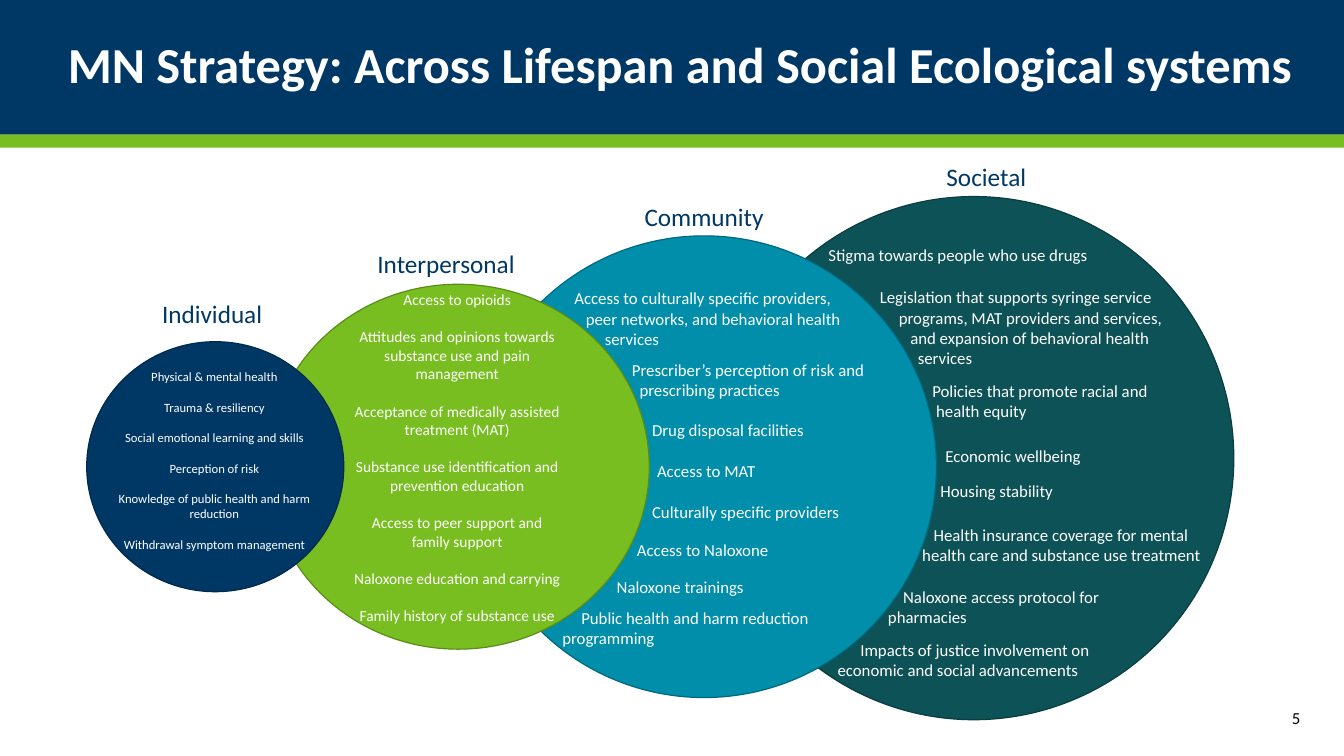
from dataclasses import dataclass

from pptx import Presentation
from pptx import util as u
from pptx.dml.color import RGBColor
from pptx.enum import shapes, text

# Boxes are (left, top, width, height) in percent of the slide's size
Box = tuple[float, float, float, float]

FONT = "Calibri"
NAVY, GREEN, WHITE = "003865", "78BE21", "FFFFFF"
LEFT, CENTER, RIGHT = text.PP_ALIGN.LEFT, text.PP_ALIGN.CENTER, text.PP_ALIGN.RIGHT
LINE_HEIGHT = 1.22  # line pitch of the font, in ems
INDENT = 2.71  # points per indent step


@dataclass
class Level:
    name: str
    label: tuple[float, float]
    circle: Box
    fill: str
    line: str


@dataclass
class FactorList:
    box: Box
    size: float
    factors: list[str]


@dataclass
class Note:
    left: float
    top: float
    lines: list[str]
    indents: tuple[int, ...] = (0, 0, 0, 0)
    width: float = 25.0


LEVELS = [
    Level("Societal", (67.35, 20.67), (53.1, 26, 38.7, 69.2), "0D5257", "0A3D40"),
    Level("Community", (46.35, 26), (35.1, 31.2, 34.58, 61.07), "008EAA", "00697E"),
    Level("Interpersonal", (27.15, 32.13), (19.88, 37.6, 28.43, 48.27), GREEN, "598D18"),
    Level("Individual", (9.75, 38.8), (6.45, 45.2, 19.13, 33.07), NAVY, "00294B"),
]

FACTOR_LISTS = [
    FactorList((25.43, 37.73, 17.18, 48.27), 11, [
        "Access to opioids",
        "Attitudes and opinions towards substance use and pain management",
        "Acceptance of medically assisted treatment (MAT)",
        "Substance use identification and prevention education",
        "Access to peer support and family support",
        "Naloxone education and carrying",
        "Family history of substance use",
    ]),
    FactorList((7.13, 48.13, 17.63, 26.4), 9, [
        "Physical & mental health",
        "Trauma & resiliency",
        "Social emotional learning and skills",
        "Perception of risk",
        "Knowledge of public health and harm reduction",
        "Withdrawal symptom management",
    ]),
]

SOCIETAL_NOTES = [
    Note(60.9, 31.73, ["Stigma towards people who use drugs"]),
    Note(64.73, 37.33, ["Legislation that supports syringe service",
                        "programs, MAT providers and services,",
                        "and expansion of behavioral health",
                        "services"], (0, 5, 8, 10)),
    Note(68.63, 49.73, ["Policies that promote racial and", "health equity"], (0, 1)),
    Note(69.6, 58.27, ["Economic wellbeing"]),
    Note(69.23, 62.93, ["Housing stability"]),
    Note(67.88, 68.8, ["Health insurance coverage for mental",
                       "health care and substance use treatment"], (3, 0)),
    Note(65.33, 76.93, ["Naloxone access protocol for", "pharmacies"], (4, 0)),
    Note(61.58, 84, ["Impacts of justice involvement on",
                     "economic and social advancements"], (6, 0)),
]

COMMUNITY_NOTES = [
    Note(42, 37.47, ["Access to culturally specific providers,",
                     "peer networks, and behavioral health",
                     "services"], (0, 3, 8)),
    Note(46.28, 46.93, ["Prescriber’s perception of risk and",
                        "prescribing practices"], (0, 2)),
    Note(47.78, 54.93, ["Drug disposal facilities"]),
    Note(48.15, 60.27, ["Access to MAT"]),
    Note(47.78, 65.73, ["Culturally specific providers"]),
    Note(46.65, 70.8, ["Access to Naloxone"]),
    Note(45.15, 75.6, ["Naloxone trainings"]),
    Note(41.1, 79.73, ["Public health and harm reduction", "programming"], (5, 0), 27.9),
]

prs = Presentation()
prs.slide_width, prs.slide_height = u.Inches(13.33), u.Inches(7.5)
s = prs.slides.add_slide(prs.slide_layouts[6])


def rgb(color: str) -> RGBColor:
    return RGBColor.from_string(color)


def place(box: Box) -> list[int]:
    sides = (prs.slide_width, prs.slide_height) * 2
    return [round(side * share / 100) for side, share in zip(sides, box)]


def add_figure(kind: shapes.MSO_SHAPE, box: Box, fill: str, line: str = "") -> None:
    sp = s.shapes.add_shape(kind, *place(box))
    sp.shadow.inherit = False
    sp.fill.solid()
    sp.fill.fore_color.rgb = rgb(fill)
    if line:
        sp.line.color.rgb = rgb(line)
        sp.line.width = u.Pt(0.85)
    else:
        sp.line.fill.background()


def add_text(box: Box, lines: list[str], size: float, color: str = WHITE,
             align: text.PP_ALIGN = LEFT, bold: bool = False, gap: float = 0):
    """Adds a text box with one paragraph per line, gap points apart."""
    tf = s.shapes.add_textbox(*place(box)).text_frame
    tf.word_wrap = True
    for i, line in enumerate(lines):
        p = tf.add_paragraph() if i else tf.paragraphs[0]
        p.alignment = align
        if i and gap:
            p.space_before = u.Pt(gap)
        r = p.add_run()
        r.text = line
        r.font.name, r.font.size, r.font.bold = FONT, u.Pt(size), bold
        r.font.color.rgb = rgb(color)
    return tf


def add_note(note: Note) -> None:
    height = 1.33 + 2.7 * len(note.lines)
    tf = add_text((note.left, note.top, note.width, height), note.lines, 12)
    for p, steps in zip(tf.paragraphs, note.indents):
        if steps:
            p._p.get_or_add_pPr().set("marL", str(u.Pt(steps * INDENT)))


# Header bar and title
add_figure(shapes.MSO_SHAPE.RECTANGLE, (0, 0, 100, 17.8), NAVY)
add_figure(shapes.MSO_SHAPE.RECTANGLE, (0, 17.8, 100, 1.73), GREEN)
title = add_text((0, 0, 97.5, 17.8),
                 ["MN Strategy: Across Lifespan and Social Ecological systems"],
                 36, align=CENTER, bold=True)
title.vertical_anchor = text.MSO_ANCHOR.MIDDLE
title.margin_left, title.margin_right = u.Inches(0.5), 0
title.paragraphs[0].line_spacing = 0.9

# Slide number
number = add_text((85.5, 92.27, 12, 5.33), ["5"], 12, "000000", RIGHT)
number.vertical_anchor = text.MSO_ANCHOR.MIDDLE

# Overlapping circles, from the widest level to the narrowest
for level in LEVELS:
    add_figure(shapes.MSO_SHAPE.OVAL, level.circle, level.fill, level.line)

# Level names
for level in LEVELS:
    add_text((*level.label, 12.08, 5.33), [level.name], 18, NAVY, CENTER)

# Factors, one blank line's height apart
for group in FACTOR_LISTS:
    add_text(group.box, group.factors, group.size, align=CENTER,
             gap=round(group.size * LINE_HEIGHT, 1))

# Notes that follow the curve of the neighbouring circle
for note in SOCIETAL_NOTES + COMMUNITY_NOTES:
    add_note(note)

prs.save("out.pptx")
